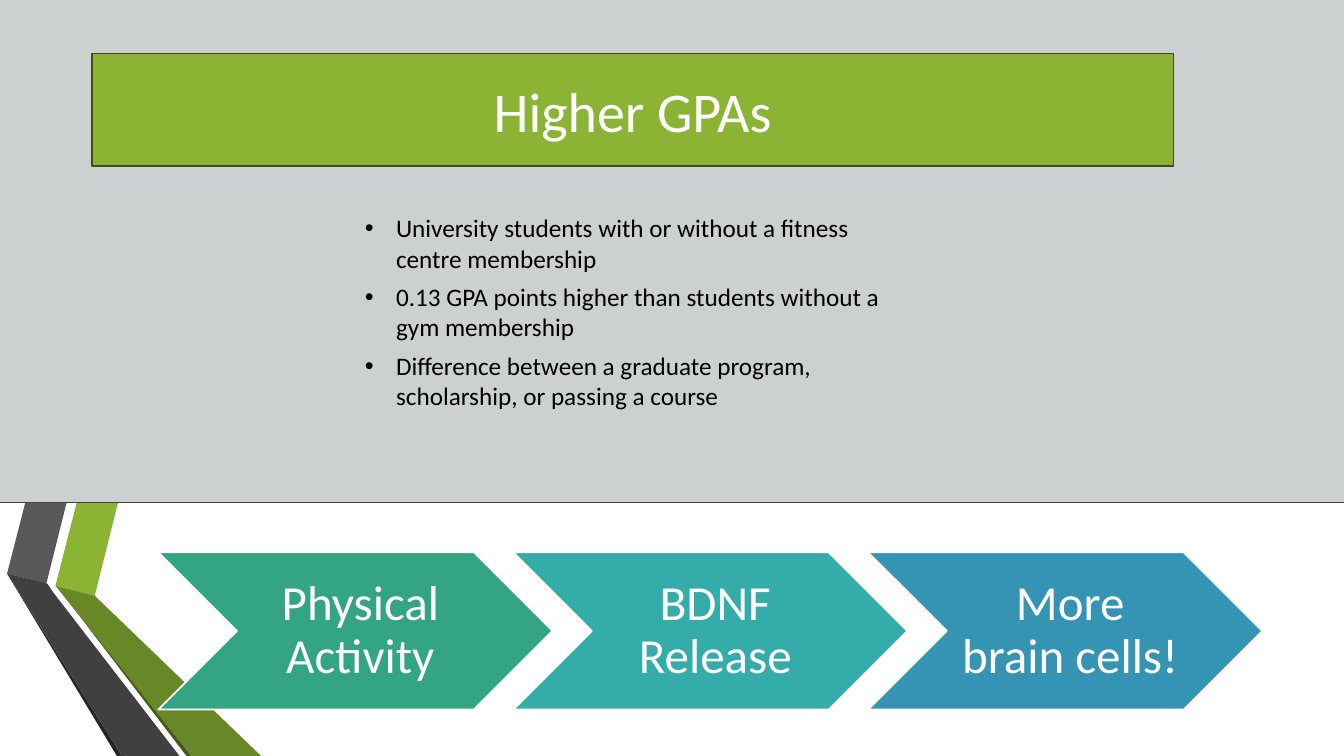
import pptx
import pptx.util
import pptx.dml.color
import pptx.enum.shapes
import pptx.enum.text
import pptx.oxml.ns
from lxml import etree

Inches = pptx.util.Inches
Pt = pptx.util.Pt
RGBColor = pptx.dml.color.RGBColor
Shape = pptx.enum.shapes.MSO_SHAPE
qn = pptx.oxml.ns.qn

WHITE = RGBColor(0xFF, 0xFF, 0xFF)
BLACK = RGBColor(0, 0, 0)
PALE = RGBColor(0xCD, 0xD0, 0xD1)
LIME = RGBColor(0x8B, 0xB4, 0x34)
OLIVE = RGBColor(0x68, 0x87, 0x27)
MOSS = RGBColor(0x46, 0x5A, 0x1A)
EDGE = RGBColor(0x3D, 0x4F, 0x17)
GREY = RGBColor(0x59, 0x59, 0x59)
DARK = RGBColor(0x40, 0x40, 0x40)
COAL = RGBColor(0x26, 0x26, 0x26)
GREEN = RGBColor(0x33, 0xA5, 0x83)
TEAL = RGBColor(0x34, 0xAC, 0xAA)
BLUE = RGBColor(0x35, 0x94, 0xB4)

SPLIT = 4.99
RIBBONS = [
    (LIME, [(0.76, SPLIT), (1.17, SPLIT), (0.94, 5.91), (0.55, 5.81)]),
    (GREY, [(0.25, SPLIT), (0.66, SPLIT), (0.46, 5.79), (0.07, 5.69)]),
    (COAL, [(0.07, 5.69), (1.21, 7.5), (1.16, 7.5)]),
    (MOSS, [(0.56, 5.81), (1.9, 7.5), (1.85, 7.5)]),
    (OLIVE, [(0.55, 5.81), (0.94, 5.91), (2.59, 7.5), (1.9, 7.5)]),
    (DARK, [(0.07, 5.69), (0.47, 5.79), (0.53, 5.88), (1.78, 7.5), (1.21, 7.5)]),
]
STEPS = [
    ("Physical Activity", GREEN),
    ("BDNF Release", TEAL),
    ("More brain cells!", BLUE),
]
POINTS = [
    "University students with or without a fitness centre membership",
    "0.13 GPA points higher than students without a gym membership",
    "Difference between a graduate program, scholarship, or passing a course",
]


def paint(shape, fill, line=None):
    """Set a flat fill and an optional outline."""
    shape.shadow.inherit = False
    shape.fill.solid()
    shape.fill.fore_color.rgb = fill
    if line is None:
        shape.line.fill.background()
    else:
        shape.line.color.rgb = line
        shape.line.width = Pt(1.25)


def add_run(para, text, size, color):
    """Add one run of text to a paragraph."""
    run = para.add_run()
    run.text = text
    run.font.name = "Calibri"
    run.font.size = Pt(size)
    run.font.color.rgb = color


def add_block(slide, kind, box, fill, line=None):
    """Add a painted preset shape."""
    shape = slide.shapes.add_shape(kind, *map(Inches, box))
    paint(shape, fill, line)
    return shape


def add_label(shape, text, size):
    """Write centred white text in a shape."""
    frame = shape.text_frame
    frame.word_wrap = True
    frame.vertical_anchor = pptx.enum.text.MSO_ANCHOR.MIDDLE
    para = frame.paragraphs[0]
    para.alignment = pptx.enum.text.PP_ALIGN.CENTER
    add_run(para, text, size, WHITE)
    return frame


def add_ribbon(slide, fill, points):
    """Add one closed ribbon facet."""
    start, *rest = [(Inches(x), Inches(y)) for x, y in points]
    builder = slide.shapes.build_freeform(*start)
    builder.add_line_segments(rest, close=True)
    paint(builder.convert_to_shape(), fill)


def add_rule(slide):
    """Draw the line between the two halves."""
    rule = slide.shapes.add_connector(
        pptx.enum.shapes.MSO_CONNECTOR.STRAIGHT,
        Inches(0), Inches(SPLIT), Inches(13.33), Inches(SPLIT))
    rule.line.color.rgb = DARK
    rule.line.width = Pt(0.75)
    etree.SubElement(rule.element.spPr, qn("a:effectLst"))


def add_step(slide, index, text, fill):
    """Add one chevron of the process."""
    box = (1.57 + 3.52 * index, 5.48, 3.91, 1.56)
    step = add_block(slide, Shape.CHEVRON, box, fill, WHITE)
    frame = add_label(step, text, 35)
    frame.margin_left = Inches(0.15)
    frame.margin_right = Inches(0.05)
    frame.paragraphs[0].line_spacing = 0.9


def add_list(slide):
    """Add the bulleted findings."""
    box = slide.shapes.add_textbox(*map(Inches, (3.52, 2.06, 5.53, 2.09)))
    frame = box.text_frame
    frame.word_wrap = True
    for index, text in enumerate(POINTS):
        para = frame.add_paragraph() if index else frame.paragraphs[0]
        para.space_after = Pt(6)
        props = para._p.get_or_add_pPr()
        props.set("marL", str(Inches(0.31)))
        props.set("indent", str(-Inches(0.31)))
        etree.SubElement(props, qn("a:buFont"), typeface="Arial")
        etree.SubElement(props, qn("a:buChar"), char="•")
        add_run(para, text, 18, BLACK)


def main():
    """Build and save the slide."""
    deck = pptx.Presentation()
    deck.slide_width = Inches(13.33)
    deck.slide_height = Inches(7.5)
    slide = deck.slides.add_slide(deck.slide_layouts[6])
    slide.background.fill.solid()
    slide.background.fill.fore_color.rgb = WHITE
    add_block(slide, Shape.RECTANGLE, (0, 0, 13.33, SPLIT), PALE)
    for fill, points in RIBBONS:
        add_ribbon(slide, fill, points)
    add_rule(slide)
    for index, (text, fill) in enumerate(STEPS):
        add_step(slide, index, text, fill)
    add_list(slide)
    title = add_block(
        slide, Shape.RECTANGLE, (0.91, 0.53, 10.73, 1.12), LIME, EDGE)
    add_label(title, "Higher GPAs", 40)
    deck.save("out.pptx")


if __name__ == "__main__":
    main()
